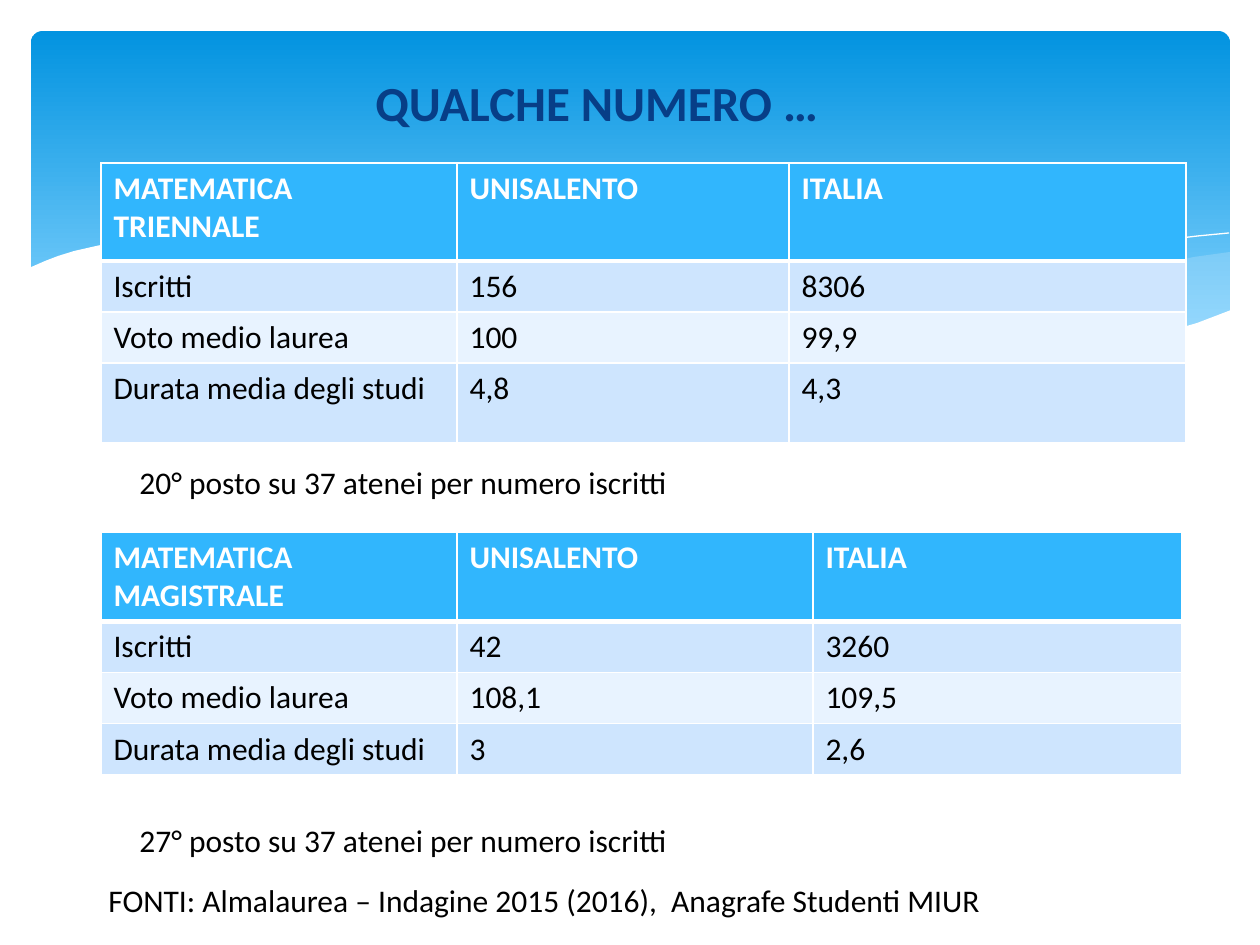
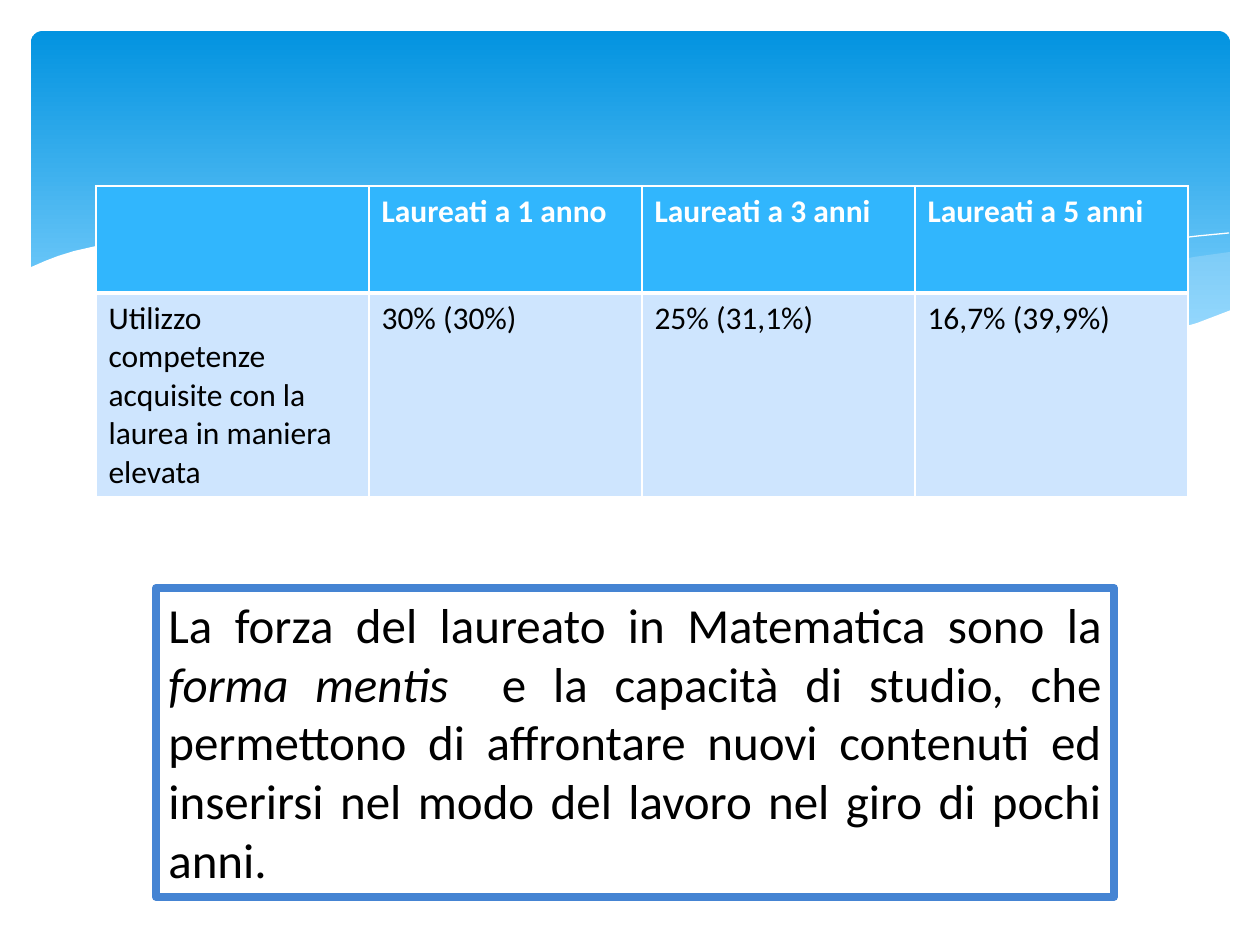
"""Build two slides of figures on mathematics graduates."""
from lxml import etree
from pptx import Presentation
from pptx.dml.color import RGBColor
from pptx.enum.shapes import MSO_SHAPE
from pptx.enum.text import MSO_ANCHOR, PP_ALIGN
from pptx.oxml.ns import qn
from pptx.util import Pt

PX = 914400 / 126
ROUNDED, RECTANGLE = MSO_SHAPE.ROUNDED_RECTANGLE, MSO_SHAPE.RECTANGLE
TOP, JUSTIFY = MSO_ANCHOR.TOP, PP_ALIGN.JUSTIFY

WHITE = RGBColor(0xFF, 0xFF, 0xFF)
BLACK = RGBColor(0x00, 0x00, 0x00)
NAVY = RGBColor(0x07, 0x3E, 0x87)
BAND_TOP = RGBColor(0x02, 0x93, 0xE0)
BAND_END = RGBColor(0x83, 0xD3, 0xFE)
WAVE = RGBColor(0xC6, 0xE7, 0xFC)
HEADER = RGBColor(0x31, 0xB6, 0xFD)
ROW_DARK = RGBColor(0xCE, 0xE5, 0xFE)
ROW_LIGHT = RGBColor(0xE8, 0xF3, 0xFF)
FRAME = RGBColor(0x45, 0x84, 0xD3)

BODY = {"name": "Calibri", "size": Pt(18), "bold": False}
HEADING = {**BODY, "bold": True}
TITLE = {**HEADING, "size": Pt(28)}
MESSAGE = {**BODY, "size": Pt(28)}

RIGHT_WAVE = [
    (1230, 252), (1194, 257), (1160, 265), (1123, 272), (1085, 281), (1014, 299),
    (949, 312), (890, 324), (833, 334), (871, 339), (922, 345), (969, 349),
    (1026, 350), (1076, 348), (1120, 343), (1160, 334), (1196, 324), (1230, 311)]
MIDDLE_WAVE = [
    (1125, 344), (1055, 334), (976, 320), (890, 302), (793, 280), (736, 266),
    (682, 256), (616, 244), (557, 238), (503, 234), (455, 233), (413, 236),
    (360, 241), (431, 251), (509, 266), (566, 280), (668, 302), (757, 321),
    (838, 335), (910, 345), (974, 349), (1031, 350), (1080, 349)]
FALLING_LINE = [
    (389, 246), (433, 239), (488, 236), (546, 236), (616, 239), (701, 248),
    (801, 262), (916, 285), (1047, 316), (1143, 343)]
RISING_LINE = [
    (772, 324), (847, 304), (942, 281), (1016, 265), (1091, 251), (1147, 242),
    (1198, 236), (1229, 233)]
FRONT_WAVE = [
    (1231, 310), (1197, 323), (1159, 334), (1118, 341), (1071, 347), (1019, 349),
    (959, 347), (892, 340), (816, 330), (730, 315), (634, 294), (563, 277),
    (493, 261), (428, 248), (368, 239), (315, 234), (266, 232), (223, 232),
    (184, 233), (150, 236), (120, 241), (96, 246), (74, 251), (58, 256),
    (45, 261), (29, 268), (29, 415), (1231, 415)]

BACHELOR = [
    ["MATEMATICA TRIENNALE", "UNISALENTO", "ITALIA"],
    ["Iscritti", "156", "8306"],
    ["Voto medio laurea", "100", "99,9"],
    ["Durata media degli studi", "4,8", "4,3"]]
MASTER = [
    ["MATEMATICA\nMAGISTRALE", "UNISALENTO", "ITALIA"],
    ["Iscritti", "42", "3260"],
    ["Voto medio laurea", "108,1", "109,5"],
    ["Durata media degli studi", "3", "2,6"]]
SKILLS = [
    ["", "Laureati a 1 anno", "Laureati a 3 anni", "Laureati a 5 anni"],
    ["Utilizzo competenze acquisite con la laurea in maniera elevata",
     "30% (30%)", "25% (31,1%)", "16,7% (39,9%)"]]


def emu(*lengths):
    """Turn px lengths into EMU."""
    return [round(length * PX) for length in lengths]


def style_font(font, values, colour):
    """Apply format values and a colour to a font."""
    for name, value in values.items():
        setattr(font, name, value)
    font.color.rgb = colour


def add_curve(page, points, colour, opacity=None):
    """Draw a filled outline, or a hairline when no opacity is given."""
    filled = opacity is not None
    builder = page.shapes.build_freeform(*points[0], scale=PX)
    builder.add_line_segments(points[1:], close=filled)
    curve = builder.convert_to_shape()
    curve.shadow.inherit = False
    if filled:
        curve.fill.solid()
        curve.fill.fore_color.rgb = colour
        curve.line.fill.background()
        shade = curve._element.spPr.find(".//" + qn("a:srgbClr"))
        etree.SubElement(shade, qn("a:alpha"), val=str(opacity * 1000))
    else:
        curve.fill.background()
        curve.line.color.rgb = colour
        curve.line.width = 0


def add_banner(page):
    """Draw the gradient band and its waves."""
    band = page.shapes.add_shape(ROUNDED, *emu(31, 31, 1199, 340))
    band.adjustments[0] = 0.034
    band.shadow.inherit = False
    band.line.fill.background()
    band.fill.gradient()
    band.fill.gradient_angle = 270
    stops = [(0, BAND_TOP), (0.9, BAND_END)]
    for stop, (position, colour) in zip(band.fill.gradient_stops, stops):
        stop.position = position
        stop.color.rgb = colour
    add_curve(page, RIGHT_WAVE, WAVE, 29)
    add_curve(page, MIDDLE_WAVE, WAVE, 40)
    add_curve(page, FALLING_LINE, WHITE)
    add_curve(page, RISING_LINE, WHITE)
    add_curve(page, FRONT_WAVE, WHITE, 100)


def add_borders(cell, top, bottom):
    """Give a cell white borders, with top and bottom widths in points."""
    widths = {"a:lnL": 1, "a:lnR": 1, "a:lnT": top, "a:lnB": bottom}
    properties = cell._tc.get_or_add_tcPr()
    for index, (tag, width) in enumerate(widths.items()):
        border = etree.Element(qn(tag), w=str(Pt(width)))
        fill = etree.SubElement(border, qn("a:solidFill"))
        etree.SubElement(fill, qn("a:srgbClr"), val=str(WHITE))
        properties.insert(index, border)


def add_grid(page, left, top, widths, heights, rows):
    """Add a table with a header row and alternating body rows."""
    frame = page.shapes.add_table(
        len(rows), len(widths), *emu(left, top, sum(widths), sum(heights)))
    table = frame.table
    for column, width in zip(table.columns, emu(*widths)):
        column.width = width
    for row, height in zip(table.rows, emu(*heights)):
        row.height = height
    for row_index, texts in enumerate(rows):
        is_header = row_index == 0
        shade = HEADER if is_header else (ROW_LIGHT, ROW_DARK)[row_index % 2]
        for column_index, text in enumerate(texts):
            cell = table.cell(row_index, column_index)
            cell.text = text
            cell.fill.solid()
            cell.fill.fore_color.rgb = shade
            add_borders(cell, 3 if row_index == 1 else 1, 3 if is_header else 1)
            for para in cell.text_frame.paragraphs:
                style_font(para.font, HEADING if is_header else BODY,
                           WHITE if is_header else BLACK)


def add_label(page, left, top, width, height, text, values=BODY, colour=BLACK):
    """Add one line of text."""
    box = page.shapes.add_textbox(*emu(left, top, width, height))
    box.text_frame.word_wrap = True
    para = box.text_frame.paragraphs[0]
    para.text = text
    style_font(para.font, values, colour)


def add_message(page, left, top, width, height, spans):
    """Add a framed, justified message made of (text, italic) spans."""
    box = page.shapes.add_shape(RECTANGLE, *emu(left, top, width, height))
    box.shadow.inherit = False
    box.fill.background()
    box.line.color.rgb = FRAME
    box.line.width = Pt(4.5)
    box.text_frame.word_wrap = True
    box.text_frame.vertical_anchor = TOP
    para = box.text_frame.paragraphs[0]
    para.alignment = JUSTIFY
    for text, italic in spans:
        span = para.add_run()
        span.text = text
        style_font(span.font, {**MESSAGE, "italic": italic}, BLACK)


def add_page(deck):
    """Add a blank page with the banner."""
    page = deck.slides.add_slide(deck.slide_layouts[6])
    add_banner(page)
    return page


def build_numbers(deck):
    """Build the page comparing local and national figures."""
    page = add_page(deck)
    add_grid(page, 101, 163, [356, 332, 397], [98, 51, 51, 80], BACHELOR)
    add_grid(page, 101, 532, [356, 356, 369], [87, 51, 51, 51], MASTER)
    add_label(page, 363, 66, 501, 72, "QUALCHE NUMERO …", TITLE, NAVY)
    add_label(page, 96, 875, 1074, 51,
              "FONTI: Almalaurea – Indagine 2015 (2016),  Anagrafe Studenti MIUR")
    for top, rank in [(457, 20), (815, 27)]:
        add_label(page, 127, top, 659, 51,
                  f"{rank}° posto su 37 atenei per numero iscritti")


def build_skills(deck):
    """Build the page on the use of skills after graduation."""
    page = add_page(deck)
    add_grid(page, 96, 186, [273] * 4, [107, 204], SKILLS)
    add_message(page, 156, 588, 958, 309, [
        ("La forza del laureato in Matematica sono la ", False),
        ("forma mentis ", True),
        (" e la capacità di studio, che permettono di affrontare nuovi contenuti "
         "ed inserirsi nel modo del lavoro nel giro di pochi anni.", False)])


def main():
    """Build and save the deck."""
    deck = Presentation()
    deck.slide_width, deck.slide_height = emu(1260, 945)
    build_numbers(deck)
    build_skills(deck)
    deck.save("out.pptx")


if __name__ == "__main__":
    main()
